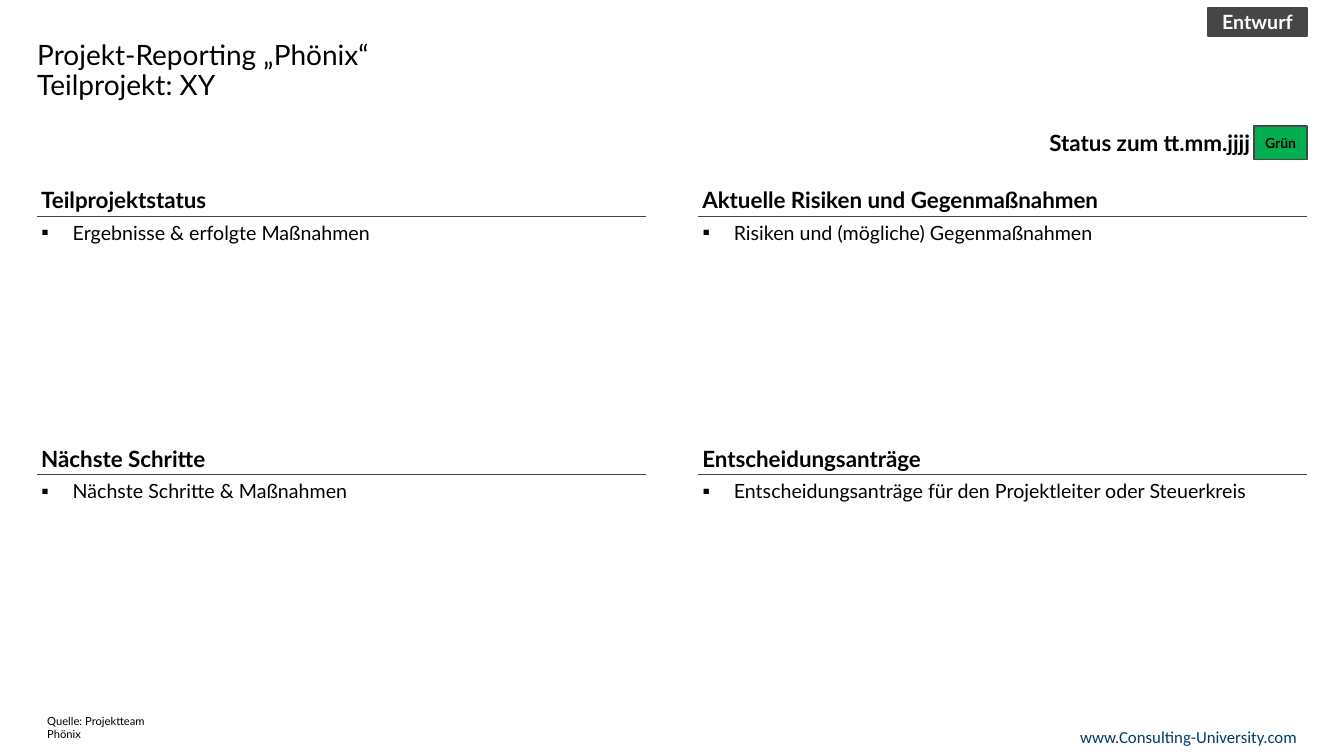
from dataclasses import dataclass

from lxml.etree import SubElement
from pptx import Presentation
from pptx.dml.color import RGBColor
from pptx.enum.shapes import MSO_CONNECTOR, MSO_SHAPE
from pptx.enum.text import MSO_ANCHOR, PP_ALIGN
from pptx.oxml.ns import qn
from pptx.util import Pt


@dataclass(frozen=True)
class Theme:
    font: str = "Lato"
    web_font: str = "Calibri"
    black: RGBColor = RGBColor(0x00, 0x00, 0x00)
    white: RGBColor = RGBColor(0xFF, 0xFF, 0xFF)
    grey: RGBColor = RGBColor(0x46, 0x46, 0x46)
    green: RGBColor = RGBColor(0x00, 0xB0, 0x50)
    blue: RGBColor = RGBColor(0x00, 0x3D, 0x66)
    title: int = 20
    heading: int = 16
    body: int = 14
    web: int = 12
    light: int = 10
    source: int = 8


THEME = Theme()
DEFAULT_INSETS = (7.2, 3.6)
TIGHT_INSETS = (2.83, 2.83)

# Page layout in points
LEFT, CONTENT_WIDTH = 26.6, 907
RIGHT = LEFT + CONTENT_WIDTH
GAP = 37.4
HEADING_HEIGHT = 23.8
PANEL_WIDTH = (CONTENT_WIDTH - GAP) / 2
PANEL_TOP, PANEL_HEIGHT, PANEL_PITCH = 131, 183, 184.3

PANELS = [
    ("Teilprojektstatus", "Ergebnisse & erfolgte Maßnahmen"),
    ("Aktuelle Risiken und Gegenmaßnahmen", "Risiken und (mögliche) Gegenmaßnahmen"),
    ("Nächste Schritte", "Nächste Schritte & Maßnahmen"),
    ("Entscheidungsanträge", "Entscheidungsanträge für den Projektleiter oder Steuerkreis"),
]


def write(shape, text, size, color=THEME.black, bold=False, font=THEME.font,
          align=PP_ALIGN.LEFT, anchor=MSO_ANCHOR.MIDDLE, insets=TIGHT_INSETS):
    frame = shape.text_frame
    frame.word_wrap = True
    frame.vertical_anchor = anchor
    frame.margin_left = frame.margin_right = Pt(insets[0])
    frame.margin_top = frame.margin_bottom = Pt(insets[1])
    paragraph = frame.paragraphs[0]
    paragraph.text = text
    paragraph.alignment = align
    for run in paragraph.runs:
        run.font.name, run.font.size = font, Pt(size)
        run.font.bold, run.font.color.rgb = bold, color
    return paragraph


def add_text(slide, box, text, size, **style):
    return write(slide.shapes.add_textbox(*map(Pt, box)), text, size, **style)


def add_block(slide, box, fill, line, text, size, **style):
    block = slide.shapes.add_shape(MSO_SHAPE.RECTANGLE, *map(Pt, box))
    block.shadow.inherit = False
    block.fill.solid()
    block.fill.fore_color.rgb = fill
    block.line.color.rgb = line
    block.line.width = Pt(1)
    write(block, text, size, bold=True, **style)


def add_bullet(paragraph):
    properties = paragraph._p.get_or_add_pPr()
    properties.set("marL", str(Pt(22.5)))
    properties.set("indent", str(-Pt(22.5)))
    SubElement(properties, qn("a:buFont")).set("typeface", THEME.font)
    SubElement(properties, qn("a:buChar")).set("char", "▪")


def add_header(slide, left, top, width, height):
    # Title and draft tag
    title = add_text(slide, (left, top + 20, width, 42.5),
                     "Projekt-Reporting „Phönix“\vTeilprojekt: XY", THEME.title,
                     anchor=MSO_ANCHOR.TOP, insets=(0, 3.6))
    title.line_spacing = 0.9
    tag_width = 70.8
    add_block(slide, (left + width - tag_width, top, tag_width, 20), THEME.grey, THEME.grey,
              "Entwurf", THEME.body, color=THEME.white, align=PP_ALIGN.CENTER,
              insets=DEFAULT_INSETS)

    # Status date and traffic light
    light_width = 37.7
    light_left = left + width - light_width
    status_top = top + height - HEADING_HEIGHT
    add_text(slide, (light_left - 226.8, status_top, 226.8, HEADING_HEIGHT),
             "Status zum tt.mm.jjjj", THEME.heading, bold=True, align=PP_ALIGN.RIGHT)
    add_block(slide, (light_left, status_top, light_width, HEADING_HEIGHT),
              THEME.green, THEME.grey, "Grün", THEME.light, align=PP_ALIGN.CENTER)


def add_panel(slide, left, top, width, height, heading, entry):
    add_block(slide, (left, top, width, HEADING_HEIGHT), THEME.white, THEME.white,
              heading, THEME.heading)
    rule_top = top + HEADING_HEIGHT
    add_bullet(add_text(slide, (left, rule_top, width, height - HEADING_HEIGHT),
                        entry, THEME.body, anchor=MSO_ANCHOR.TOP))
    # Rule below the heading
    rule = slide.shapes.add_connector(
        MSO_CONNECTOR.STRAIGHT, Pt(left), Pt(rule_top), Pt(left + width), Pt(rule_top))
    rule.line.color.rgb = THEME.grey
    rule.line.width = Pt(1)
    SubElement(rule._element.spPr, qn("a:effectLst"))


def add_footer(slide, left, top, width, height):
    add_text(slide, (left, top, 108.7, 17.3), "Quelle: Projektteam Phönix", THEME.source,
             anchor=MSO_ANCHOR.BOTTOM, insets=DEFAULT_INSETS)
    web_width = 245
    add_text(slide, (left + width - web_width, top, web_width, height),
             "www.Consulting-University.com", THEME.web, color=THEME.blue,
             font=THEME.web_font, align=PP_ALIGN.RIGHT, insets=DEFAULT_INSETS)


def main():
    deck = Presentation()
    deck.slide_width, deck.slide_height = Pt(960), Pt(540)
    slide = deck.slides.add_slide(deck.slide_layouts[6])

    add_header(slide, LEFT, 5.8, CONTENT_WIDTH, 108)
    for index, (heading, entry) in enumerate(PANELS):
        row, column = divmod(index, 2)
        add_panel(slide, LEFT + column * (PANEL_WIDTH + GAP), PANEL_TOP + row * PANEL_PITCH,
                  PANEL_WIDTH, PANEL_HEIGHT, heading, entry)
    add_footer(slide, LEFT, 515.5, CONTENT_WIDTH, 21.8)

    deck.save("out.pptx")


if __name__ == "__main__":
    main()
